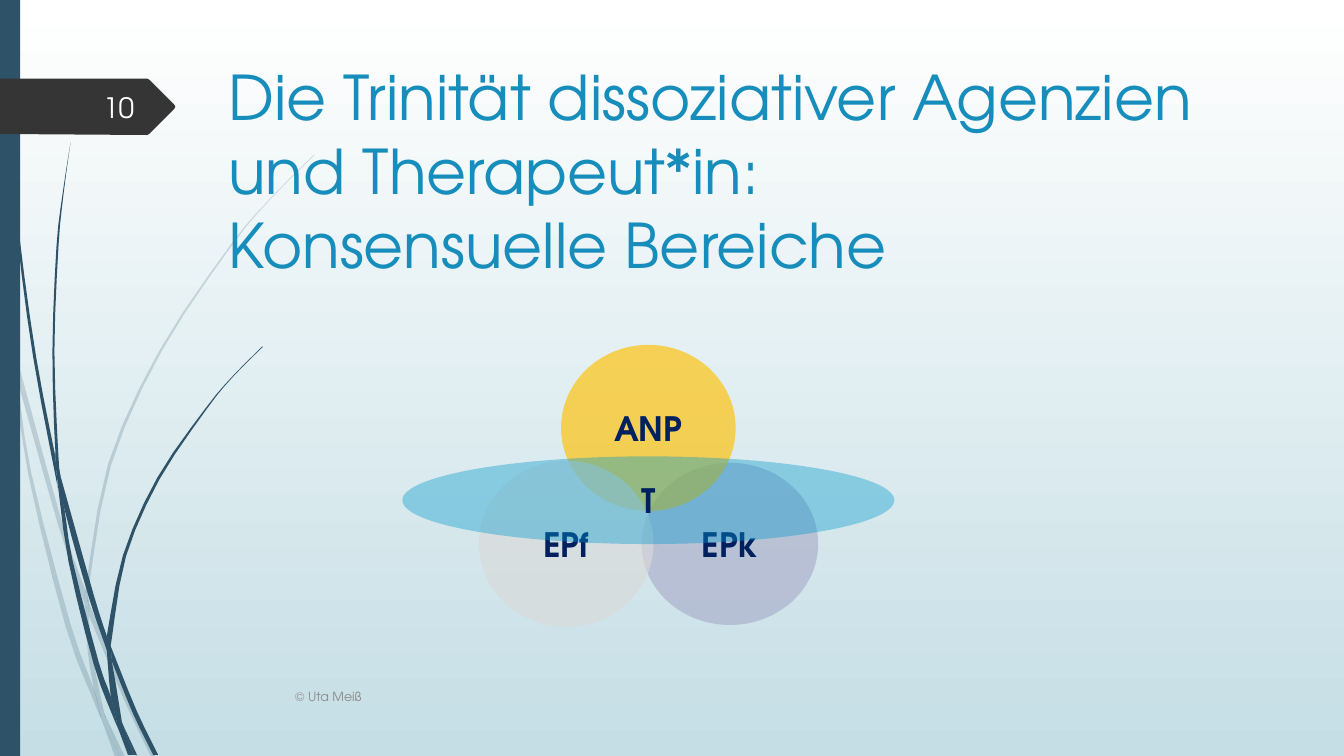
from dataclasses import dataclass
from lxml import etree
from pptx import Presentation
from pptx.dml.color import RGBColor
from pptx.enum.shapes import MSO_SHAPE
from pptx.enum.text import MSO_ANCHOR, PP_ALIGN
from pptx.oxml.ns import qn
from pptx.util import Cm, Pt

OVAL, RECT = MSO_SHAPE.OVAL, MSO_SHAPE.RECTANGLE
TOP, MIDDLE = MSO_ANCHOR.TOP, MSO_ANCHOR.MIDDLE
LEFT, CENTER, RIGHT = PP_ALIGN.LEFT, PP_ALIGN.CENTER, PP_ALIGN.RIGHT
UNIT = 2.54


@dataclass(frozen=True)
class Theme:
    """Colours, font and type sizes of the deck."""
    font: str = "TeX Gyre Adventor"
    sky: str = "FFFFFF"
    mist: str = "C5DEE5"
    steel: str = "2E5369"
    tag: str = "353535"
    title: str = "178DBB"
    navy: str = "002060"
    gold: str = "FFC000"
    grey: str = "DADADA"
    lilac: str = "AAADCA"
    blue: str = "0099CC"
    note: str = "8C8C8C"
    page: str = "FEFFFF"
    big: int = 44
    label: int = 24
    number: int = 20
    small: int = 9


THEME = Theme()

PALE = [
    ([(0, 2.82), (.09, 3.22), (.11, 3.5)], [(0, 2.99), (.1, 3.44), (.11, 3.5)]),
    ([(.14, 3.45), (.62, 5.2), (.85, 5.86)], [(.17, 3.76), (.58, 5.22), (.84, 5.99)]),
    ([(.88, 5.96), (.92, 6.07), (1.27, 6.92), (1.55, 7.51)], [(.88, 6.1), (1.23, 6.94), (1.5, 7.51)]),
    ([(1.05, 7.11), (1.24, 7.51)], [(1.19, 7.51)]),
    ([(.11, 3.5), (.17, 3.76), (.31, 4.69), (.7, 6.19), (.93, 6.83), (1.01, 7.14)],
     [(.11, 3.5), (.28, 4.7), (.65, 6.21), (.92, 6.93), (1.01, 7.14)]),
    ([(.84, 5.99), (.88, 6.1), (.91, 6.46), (1.03, 7.06), (1.05, 7.11)],
     [(.84, 5.99), (.87, 6.46), (.93, 6.83), (.96, 6.92)]),
    ([(3.12, 1.53), (2.68, 1.97), (2.28, 2.44), (1.58, 3.48), (1.07, 4.61), (.85, 5.84), (.85, 5.86)],
     [(3.12, 1.54), (2.68, 1.98), (2.29, 2.45), (1.6, 3.49), (1.1, 4.62), (.88, 5.84), (.88, 5.96)]),
    ([(1.01, 7.14), (1.19, 7.51)], [(1.14, 7.51)]),
    ([(.85, 5.86), (.88, 5.96), (.88, 6.1)], [(.84, 5.99), (.88, 6.08)]),
    ([(.93, 6.83), (.96, 6.92), (1.05, 7.11), (1.19, 7.51)], [(.99, 7.07), (1.01, 7.14), (1.19, 7.51)]),
]
DARK = [
    ([(.03, 0), (.07, 1.1), (.17, 2.33), (.33, 3.55), (.56, 4.77), (.57, 4.81)],
     [(.04, 0), (.08, 1.09), (.19, 2.32), (.36, 3.55), (.55, 4.53)]),
    ([(.6, 4.72), (.93, 5.9), (1.06, 6.31)], [(.6, 4.72), (.64, 5.05), (.88, 5.92), (1.06, 6.45)]),
    ([(1.1, 6.41), (1.13, 6.49), (1.36, 7.06), (1.57, 7.49)], [(1.11, 6.56), (1.32, 7.08), (1.52, 7.49)]),
    ([(.57, 4.77), (.64, 5.05), (.72, 5.56), (.98, 6.57), (1.1, 6.91), (1.17, 7.22)],
     [(.57, 4.77), (.68, 5.57), (.93, 6.59), (1.11, 7.08), (1.17, 7.22)]),
    ([(.7, 1.41), (.62, 1.93), (.56, 2.45), (.52, 3.49), (.55, 4.49), (.6, 4.72)],
     [(.7, 1.41), (.63, 1.93), (.58, 2.45), (.54, 3.49), (.58, 4.53), (.6, 4.72)]),
    ([(1.22, 7.19), (1.36, 7.49)], [(1.33, 7.49)]),
    ([(.55, 4.49), (.6, 4.72), (.64, 5.05)], [(.55, 4.53), (.57, 4.77), (.64, 5.05)]),
    ([(2.6, 3.44), (2.31, 3.73), (2.04, 4.05), (1.56, 4.74), (1.22, 5.51), (1.06, 6.31)],
     [(2.61, 3.44), (2.31, 3.74), (2.05, 4.06), (1.58, 4.76), (1.25, 5.52), (1.11, 6.33), (1.1, 6.41)]),
    ([(1.17, 7.22), (1.31, 7.49)], [(1.27, 7.49)]),
    ([(1.06, 6.45), (1.11, 6.56), (1.21, 7.16), (1.22, 7.19)], [(1.06, 6.45), (1.1, 6.91), (1.16, 7.06)]),
    ([(1.06, 6.31), (1.1, 6.41), (1.11, 6.56)], [(1.06, 6.45)]),
    ([(1.1, 6.91), (1.22, 7.19), (1.33, 7.49)], [(1.16, 7.17), (1.17, 7.22), (1.3, 7.49)]),
]
TAG = [(0, .78), (1.46, .78), (1.48, .79), (1.73, 1.04), (1.74, 1.06),
       (1.73, 1.08), (1.48, 1.33), (1.46, 1.34), (0, 1.33)]


def paint(shape, color, alpha=100):
    """Fill a shape without line or shadow, at the given opacity."""
    shape.shadow.inherit = False
    shape.line.fill.background()
    shape.fill.solid()
    shape.fill.fore_color.rgb = RGBColor.from_string(color)
    if alpha < 100:
        tint = shape.fill._xPr.find(qn("a:solidFill"))[0]
        etree.SubElement(tint, qn("a:alpha")).set("val", str(alpha * 1000))


def write(shape, text, size, color, align=LEFT, anchor=MIDDLE, bold=False):
    """Set and format the text of a shape."""
    frame = shape.text_frame
    frame.text = text
    frame.word_wrap = True
    frame.vertical_anchor = anchor
    for par in frame.paragraphs:
        par.alignment = align
        for run in par.runs:
            font = run.font
            font.name, font.size, font.bold = THEME.font, Pt(size), bold
            font.color.rgb = RGBColor.from_string(color)


def place(slide, kind, box, color, alpha=100):
    """Add a painted preset shape in a box given in cm."""
    shape = slide.shapes.add_shape(kind, *map(Cm, box))
    paint(shape, color, alpha)
    return shape


def note(slide, box, *args, **style):
    """Add a text box in a box given in cm."""
    write(slide.shapes.add_textbox(*map(Cm, box)), *args, **style)


def smooth(knots, steps=3):
    """Return points on a Catmull-Rom curve through the knots."""
    ends = [knots[0], *knots, knots[-1]]
    curve = []
    for quad in zip(ends, ends[1:], ends[2:], ends[3:]):
        for step in range(steps):
            t = step / steps
            curve.append(tuple(
                q + t * (r - p) / 2
                + t * t * (2 * p - 5 * q + 4 * r - s) / 2
                + t ** 3 * (3 * q - p - 3 * r + s) / 2
                for p, q, r, s in zip(*quad)))
    return curve + [knots[-1]]


def trace(slide, box, rim, color, alpha=100):
    """Draw a closed outline from the corner of the box."""
    x, y = box[:2]
    dots = [(Cm(x + u * UNIT), Cm(y + v * UNIT)) for u, v in rim]
    pen = slide.shapes.build_freeform(*dots[0])
    pen.add_line_segments(dots[1:])
    paint(pen.convert_to_shape(), color, alpha)


def edge(slide, box):
    """Draw the side decoration with the page tag."""
    x, y, _, high = box
    for blades, alpha in ((PALE, 20), (DARK, 100)):
        for near, far in blades:
            trace(slide, box, smooth(near) + smooth(far)[::-1], THEME.steel, alpha)
    place(slide, RECT, (x, y, .51, high), THEME.steel)
    trace(slide, box, TAG, THEME.tag)
    note(slide, (x + 1.47, y + 2.2, 2.16, 1.02), "10", THEME.number,
         THEME.page, align=RIGHT)


def venn(slide, box):
    """Draw three overlapping circles and the ellipse across them."""
    x, y, wide, high = box
    parts = [
        ("EPk", 6.03, 2.97, 4.45, 4.09, THEME.lilac, 65),
        ("ANP", 4, 0, 4.4, 4.19, THEME.gold, 65),
        ("EPf", 1.93, high - 4.19, 4.4, 4.19, THEME.grey, 65),
        ("T", 0, 2.81, wide, 2.21, THEME.blue, 38),
    ]
    for text, dx, dy, w, h, color, alpha in parts:
        oval = place(slide, OVAL, (x + dx, y + dy, w, h), color, alpha)
        write(oval, text, THEME.label, THEME.navy, align=CENTER, bold=True)


def main():
    """Build the slide and save it."""
    deck = Presentation()
    deck.slide_width, deck.slide_height = Cm(33.87), Cm(19.05)
    slide = deck.slides.add_slide(deck.slide_layouts[6])
    fill = slide.background.fill
    fill.gradient()
    fill.gradient_angle = 270
    for stop, color in zip(fill.gradient_stops, (THEME.sky, THEME.mist)):
        stop.color.rgb = RGBColor.from_string(color)
    edge(slide, (0, 0, 7.95, 19.05))
    note(slide, (5.51, 1.36, 24.97, 3.18),
         "Die Trinität dissoziativer Agenzien und Therapeut*in: \vKonsensuelle Bereiche",
         THEME.big, THEME.title, anchor=TOP)
    venn(slide, (10.14, 8.69, 12.4, 7.11))
    note(slide, (7.19, 17.04, 21.16, 1.02), "© Uta Meiß", THEME.small, THEME.note)
    deck.save("out.pptx")


if __name__ == "__main__":
    main()
